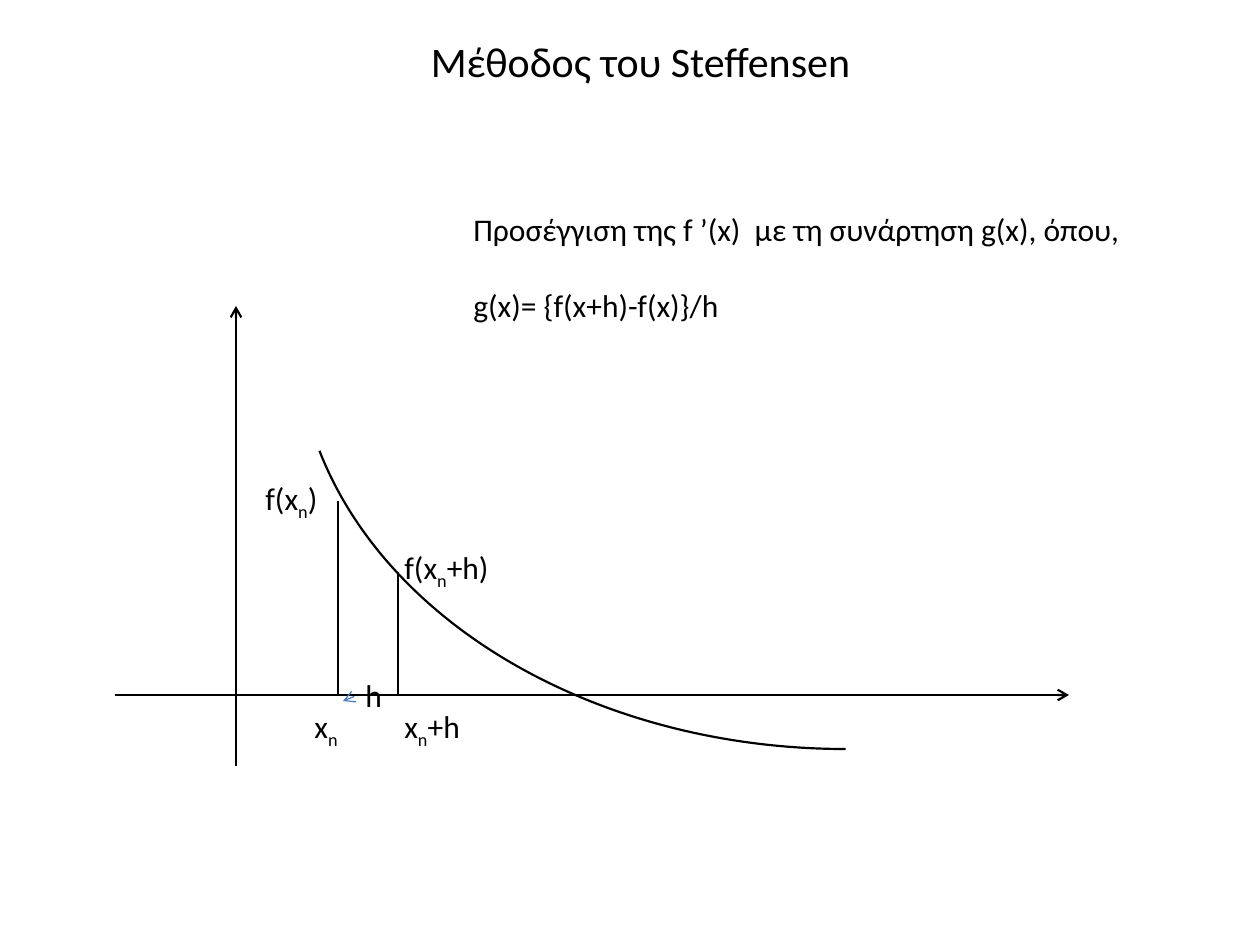
from lxml.etree import SubElement
from pptx import Presentation
from pptx.dml.color import RGBColor
from pptx.enum.shapes import MSO_CONNECTOR as Connector, MSO_SHAPE as Shape
from pptx.enum.text import MSO_ANCHOR as Anchor, MSO_AUTO_SIZE as AutoSize, PP_ALIGN as Align
from pptx.oxml.ns import qn
from pptx.util import Emu, Inches, Pt

PX_PER_INCH = 126
FONT = "Calibri"
BLACK = "000000"
BLUE = "4B7EBC"
AXIS_Y = 695


def px(length):
    """Turn a length in px into EMU."""
    return Emu(round(length * Inches(1) / PX_PER_INCH))


def colour(hex_code):
    """Turn a hex string into a colour."""
    return RGBColor.from_string(hex_code)


def style_para(para, size):
    """Set the font of a paragraph."""
    para.font.name = FONT
    para.font.size = Pt(size)
    para.font.color.rgb = colour(BLACK)


def add_title(page, text):
    """Place and format the title."""
    title = page.shapes.title
    title.left, title.top, title.width, title.height = map(px, (105, 26, 1071, 69))
    frame = title.text_frame
    frame.text = text
    frame.vertical_anchor = Anchor.MIDDLE
    para = frame.paragraphs[0]
    para.alignment = Align.CENTER
    style_para(para, 24)


def add_text(shapes, left, top, width, height, lines, wrap=False):
    """Add a text box; every second part of a line is a subscript."""
    box = shapes.add_textbox(*map(px, (left, top, width, height)))
    frame = box.text_frame
    frame.word_wrap = wrap
    frame.auto_size = AutoSize.SHAPE_TO_FIT_TEXT
    for index, parts in enumerate(lines):
        para = frame.add_paragraph() if index else frame.paragraphs[0]
        style_para(para, 18)
        if index:
            para.space_before = Pt(22)
        for place, part in enumerate(parts):
            span = para.add_run()
            span.text = part
            if place % 2:
                span.font._element.set("baseline", "-25000")


def add_line(shapes, start, end, hex_code=BLACK, width=1.25, arrow=False):
    """Add a straight line, with an arrowhead at its end if asked."""
    line = shapes.add_connector(Connector.STRAIGHT, *map(px, (*start, *end)))
    line.line.color.rgb = colour(hex_code)
    line.line.width = Pt(width)
    if arrow:
        SubElement(line.line._get_or_add_ln(), qn("a:tailEnd"), type="arrow")
    SubElement(line._element.spPr, qn("a:effectLst"))


def add_curve(shapes):
    """Add the curve of f as an arc turned upside down."""
    curve = shapes.add_shape(Shape.ARC, *map(px, (297, -83, 1097, 832)))
    curve.adjustments[0] = 162
    curve.adjustments[1] = 208.43
    curve.rotation = 180
    curve.shadow.inherit = False
    curve.fill.background()
    curve.line.color.rgb = colour(BLACK)
    curve.line.width = Pt(1.25)


def add_plot(page):
    """Add the axes, the curve and the two ordinates with their labels."""
    shapes = page.shapes.add_group_shape().shapes
    add_line(shapes, (236, 766), (236, 306), arrow=True)
    add_line(shapes, (115, AXIS_Y), (1069, AXIS_Y), arrow=True)
    add_curve(shapes)
    for x, top in ((338, 501), (398, 572)):
        add_line(shapes, (x, top), (x, AXIS_Y))
    add_text(shapes, 253, 473, 83, 51, [["f(x", "n", ")"]])
    add_text(shapes, 392, 542, 120, 51, [["f(x", "n", "+h)"]])


def main():
    """Build the slide and save it."""
    deck = Presentation()
    deck.slide_width, deck.slide_height = Inches(10), Inches(7.5)
    page = deck.slides.add_slide(deck.slide_layouts[5])
    add_title(page, "Μέθοδος του Steffensen")
    add_text(page.shapes, 353, 670, 43, 51, [["h"]])
    add_plot(page)
    add_line(page.shapes, (353, 697), (343, 701), BLUE, 0.75, arrow=True)
    add_text(page.shapes, 302, 701, 59, 51, [["x", "n"]], wrap=True)
    add_text(page.shapes, 392, 701, 89, 51, [["x", "n", "+h"]])
    add_text(page.shapes, 461, 204, 738, 127, [
        ["Προσέγγιση της f ’(x)  με τη συνάρτηση g(x), όπου,"],
        ["g(x)= {f(x+h)-f(x)}/h"],
    ])
    deck.save("out.pptx")


if __name__ == "__main__":
    main()
